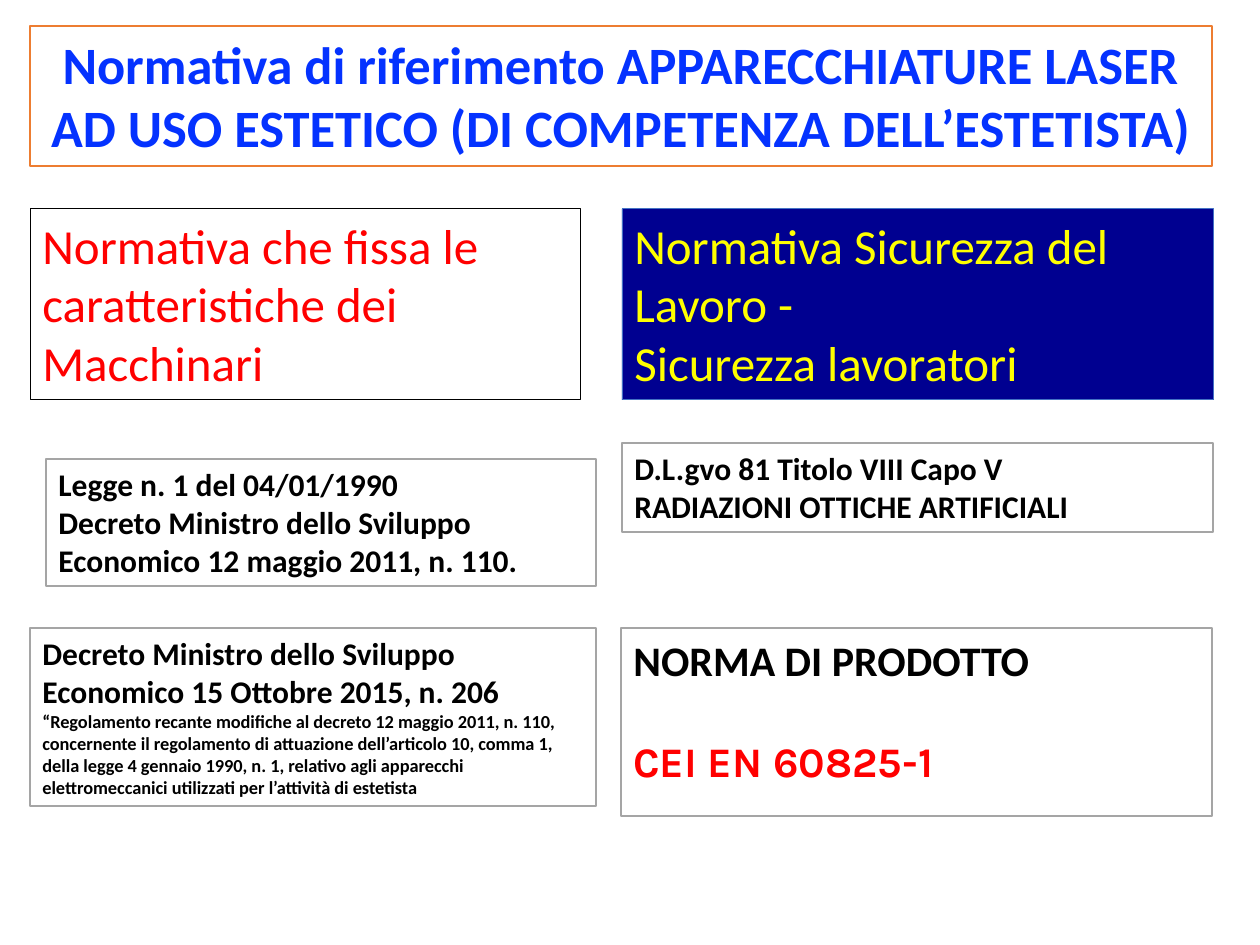
from pptx import Presentation
from pptx.dml.color import RGBColor
from pptx.enum.shapes import MSO_SHAPE
from pptx.enum.text import MSO_ANCHOR, PP_ALIGN
from pptx.util import Pt

RECT = MSO_SHAPE.RECTANGLE
TOP = MSO_ANCHOR.TOP
LEFT, CENTER = PP_ALIGN.LEFT, PP_ALIGN.CENTER
SCALE = 914400 / 126
COLORS = {
    "white": "FFFFFF", "black": "000000", "red": "FF0000",
    "yellow": "FFFF00", "blue": "0432FF", "navy": "000090",
    "edge": "4472C4", "gray": "A5A5A5", "orange": "ED7D31",
}


def emu(px):
    return round(px * SCALE)


def rgb(name):
    return RGBColor.from_string(COLORS[name])


class Deck:
    font = "Calibri"

    def __init__(self, width, height):
        self.prs = Presentation()
        self.prs.slide_width, self.prs.slide_height = emu(width), emu(height)
        self.slide = self.prs.slides.add_slide(self.prs.slide_layouts[6])

    def box(self, x, y, w, h, fill="white", line="gray", weight=1):
        """Add a framed box and return its empty text frame."""
        shape = self.slide.shapes.add_shape(RECT, *map(emu, (x, y, w, h)))
        shape.shadow.inherit = False
        shape.fill.solid()
        shape.fill.fore_color.rgb = rgb(fill)
        shape.line.color.rgb = rgb(line)
        shape.line.width = Pt(weight)
        frame = shape.text_frame
        frame.word_wrap = True
        frame.vertical_anchor = TOP
        return frame

    def text(self, frame, words, size=18, color="black", bold=True,
             align=LEFT, font=font, before=0):
        """Fill the first paragraph if it is empty, else add one."""
        para = frame.paragraphs[0]
        if para.runs:
            para = frame.add_paragraph()
        para.text = words
        para.alignment = align
        if before:
            para.space_before = Pt(before)
        para.font.name = font
        para.font.size = Pt(size)
        para.font.bold = bold
        para.font.color.rgb = rgb(color)


def main():
    deck = Deck(1260, 945)

    title = deck.box(30, 26, 1182, 140, line="orange")
    deck.text(title, "Normativa di riferimento APPARECCHIATURE LASER "
              "AD USO ESTETICO (DI COMPETENZA DELL’ESTETISTA)",
              30, "blue", align=CENTER)

    tools = deck.box(30, 209, 550, 191, line="black", weight=0.5)
    deck.text(tools, "Normativa che fissa le caratteristiche dei Macchinari",
              28, "red", bold=False)

    safety = deck.box(622, 209, 592, 191, "navy", "edge", 0.5)
    for words in ("Normativa Sicurezza del Lavoro -", "Sicurezza lavoratori"):
        deck.text(safety, words, 28, "yellow", bold=False)

    law = deck.box(46, 459, 550, 127)
    for words in ("Legge n. 1 del 04/01/1990",
                  "Decreto Ministro dello Sviluppo Economico "
                  "12 maggio 2011, n. 110."):
        deck.text(law, words)

    rays = deck.box(622, 443, 591, 89)
    for words in ("D.L.gvo 81 Titolo VIII Capo V",
                  "RADIAZIONI OTTICHE ARTIFICIALI"):
        deck.text(rays, words)

    decree = deck.box(30, 628, 566, 178)
    deck.text(decree, "Decreto Ministro dello Sviluppo Economico "
              "15 Ottobre 2015, n. 206")
    deck.text(decree, "“Regolamento recante modifiche al decreto "
              "12 maggio 2011, n. 110, concernente il regolamento di "
              "attuazione dell’articolo 10, comma 1, della legge "
              "4 gennaio 1990, n. 1, relativo agli apparecchi "
              "elettromeccanici utilizzati per l’attività di estetista",
              10.5)

    norm = deck.box(621, 628, 591, 188)
    deck.text(norm, "NORMA DI PRODOTTO", 24)
    deck.text(norm, "CEI EN 60825-1", 24, "red", font="Karla", before=29)

    deck.prs.save("out.pptx")


if __name__ == "__main__":
    main()
